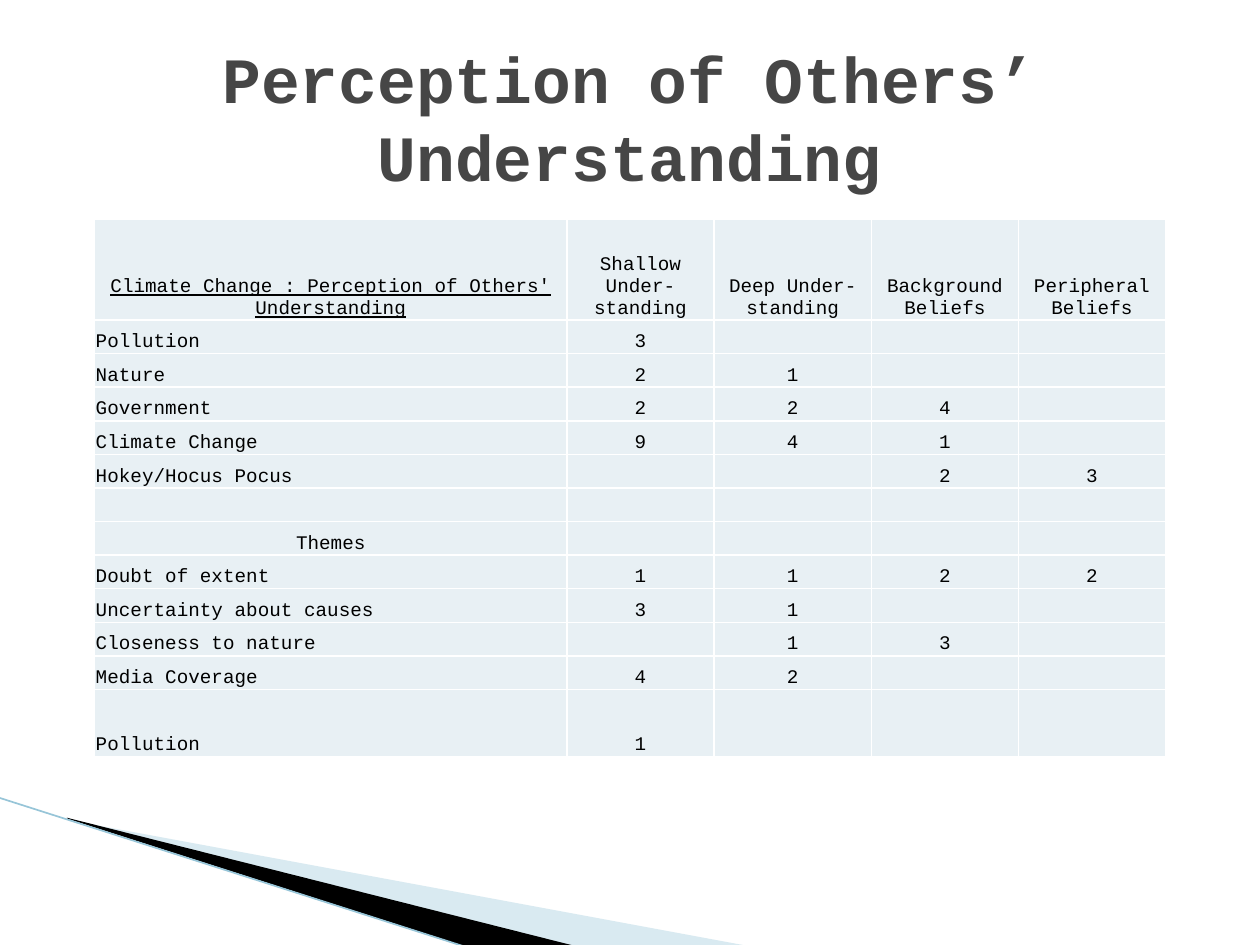
from dataclasses import dataclass

from lxml import etree
from pptx import Presentation
from pptx.dml.color import RGBColor
from pptx.enum.shapes import MSO_CONNECTOR
from pptx.enum.text import MSO_ANCHOR, PP_ALIGN
from pptx.oxml.ns import qn
from pptx.util import Pt

LEFT, CENTER = PP_ALIGN.LEFT, PP_ALIGN.CENTER
MIDDLE, BOTTOM = MSO_ANCHOR.MIDDLE, MSO_ANCHOR.BOTTOM
STRAIGHT = MSO_CONNECTOR.STRAIGHT


@dataclass(frozen=True)
class Theme:
    font: str = "Courier New"
    title_size: float = 36.9
    cell_size: int = 11
    title: str = "464646"
    ink: str = "000000"
    cell: str = "E8F0F4"
    border: str = "FFFFFF"
    pale_wedge: str = "A0CBDC"
    dark_wedge: str = "000000"
    edge: str = "97C5D8"


def apply(target, values):
    for name, value in values.items():
        setattr(target, name, value)


class SlideBuilder:
    def __init__(self, slide, theme):
        self.slide = slide
        self.theme = theme

    def add_text(self, para, text, size, color, align, **format_values):
        para.alignment = align
        span = para.add_run()
        span.text = text
        apply(span.font, {"name": self.theme.font, "size": Pt(size), **format_values})
        span.font.color.rgb = RGBColor.from_string(color)

    def title(self, text, left, top, width, height):
        box = self.slide.shapes.add_textbox(Pt(left), Pt(top), Pt(width), Pt(height))
        apply(box.text_frame, {"word_wrap": True, "vertical_anchor": MIDDLE})
        self.add_text(box.text_frame.paragraphs[0], text, self.theme.title_size,
                      self.theme.title, CENTER, bold=True)

    def wedge(self, points, color, opacity=100):
        start, *others = [(Pt(x), Pt(y)) for x, y in points]
        builder = self.slide.shapes.build_freeform(*start)
        builder.add_line_segments(others, close=True)
        shape = builder.convert_to_shape()
        shape.shadow.inherit = False
        shape.line.fill.background()
        shape.fill.solid()
        shape.fill.fore_color.rgb = RGBColor.from_string(color)
        if opacity < 100:
            color_node = shape._element.spPr.find(".//" + qn("a:srgbClr"))
            etree.SubElement(color_node, qn("a:alpha"), val=str(opacity * 1000))

    def line(self, start, end, color, width):
        line = self.slide.shapes.add_connector(
            STRAIGHT, *[Pt(value) for value in (*start, *end)])
        line.line.color.rgb = RGBColor.from_string(color)
        line.line.width = Pt(width)
        etree.SubElement(line._element.spPr, qn("a:effectLst"))

    def style_cell(self, cell):
        apply(cell, {"margin_left": Pt(0.72), "margin_right": Pt(0.72),
                     "margin_top": Pt(0.72), "margin_bottom": 0,
                     "vertical_anchor": BOTTOM})
        properties = cell._tc.get_or_add_tcPr()
        for side in ("lnL", "lnR", "lnT", "lnB"):
            border = etree.SubElement(properties, qn("a:" + side), w=str(Pt(1)))
            fill = etree.SubElement(border, qn("a:solidFill"))
            etree.SubElement(fill, qn("a:srgbClr"), val=self.theme.border)
        cell.fill.solid()
        cell.fill.fore_color.rgb = RGBColor.from_string(self.theme.cell)

    def table(self, rows, left, top, widths, heights, centered_labels):
        table = self.slide.shapes.add_table(
            len(rows), len(widths), Pt(left), Pt(top),
            Pt(sum(widths)), Pt(sum(heights))).table
        apply(table, {"first_row": False, "horz_banding": False})
        for column, width in zip(table.columns, widths):
            column.width = Pt(width)
        for row, height in zip(table.rows, heights):
            row.height = Pt(height)
        for row_index, values in enumerate(rows):
            for column_index in range(len(widths)):
                cell = table.cell(row_index, column_index)
                self.style_cell(cell)
                para = cell.text_frame.paragraphs[0]
                text = values[column_index] if column_index < len(values) else ""
                if text:
                    is_label = column_index == 0 and row_index not in centered_labels
                    self.add_text(para, text, self.theme.cell_size, self.theme.ink,
                                  LEFT if is_label else CENTER,
                                  underline=row_index == column_index == 0)
                else:
                    # Keep empty cells from stretching their row
                    etree.SubElement(para._p, qn("a:endParaRPr"),
                                     sz=str(self.theme.cell_size * 100))


ROWS = [
    ("Climate Change : Perception of Others' Understanding",
     "Shallow Under-standing", "Deep Under-standing",
     "Background Beliefs", "Peripheral Beliefs"),
    ("Pollution", "3"),
    ("Nature", "2", "1"),
    ("Government", "2", "2", "4"),
    ("Climate Change", "9", "4", "1"),
    ("Hokey/Hocus Pocus", "", "", "2", "3"),
    (),
    ("Themes",),
    ("Doubt of extent", "1", "1", "2", "2"),
    ("Uncertainty about causes", "3", "1"),
    ("Closeness to nature", "", "1", "3"),
    ("Media Coverage", "4", "2"),
    ("Pollution", "1"),
]


def main():
    deck = Presentation()
    apply(deck, {"slide_width": Pt(720), "slide_height": Pt(540)})
    theme = Theme()
    page = SlideBuilder(deck.slides.add_slide(deck.slide_layouts[6]), theme)

    # Corner decoration
    page.wedge([(39.6, 468.7), (428.4, 540.7), (328.3, 540.7), (39.6, 468)],
               theme.pale_wedge, opacity=40)
    page.wedge([(38.2, 467.3), (329, 540.7), (267.8, 541.4), (38.9, 468)],
               theme.dark_wedge)
    page.line((-0.7, 455.8), (267.1, 541.4), theme.edge, 0.95)

    # Counts by belief and theme
    heights = [57.6] + [19.2] * (len(ROWS) - 2) + [38.4]
    page.table(ROWS, 54, 125.3, [270, 84, 90, 84, 84], heights,
               centered_labels=(0, 7))

    # Title
    page.title("Perception of Others’ Understanding", 36, 21.6, 648, 90)

    deck.save("out.pptx")


if __name__ == "__main__":
    main()
